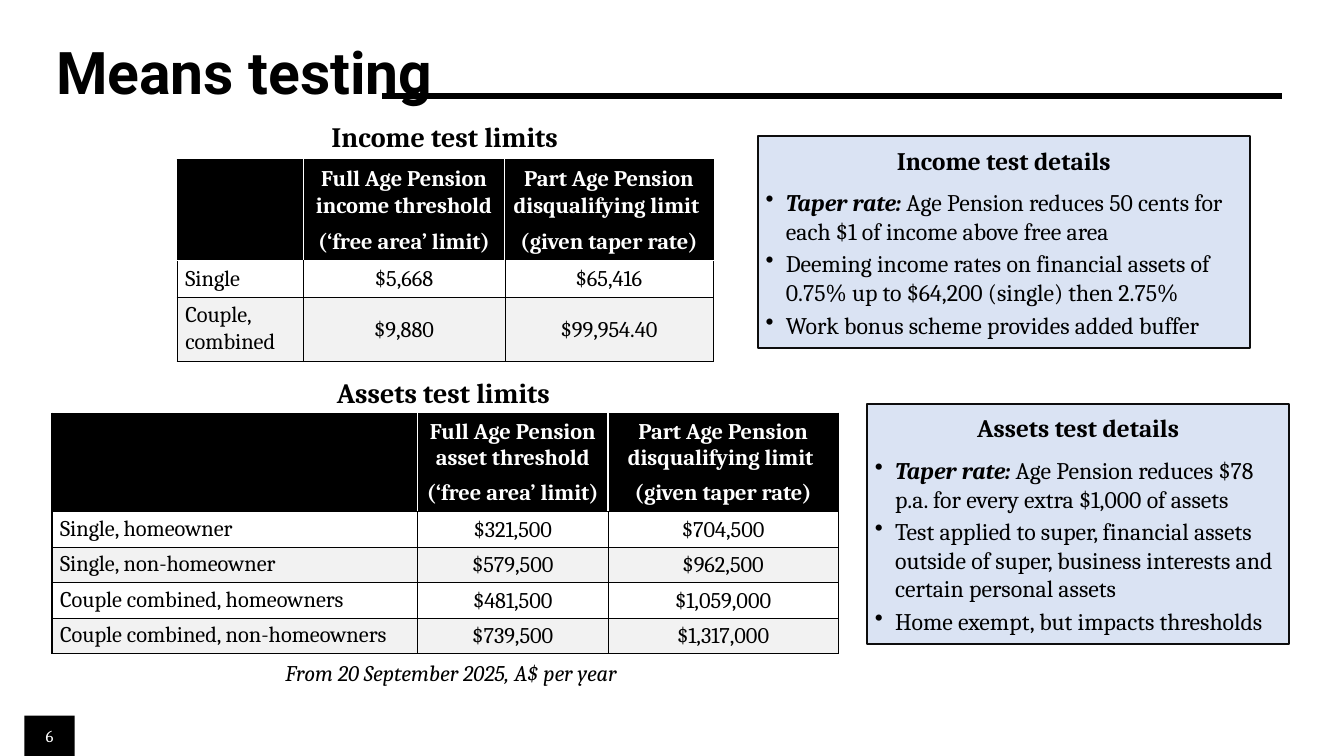
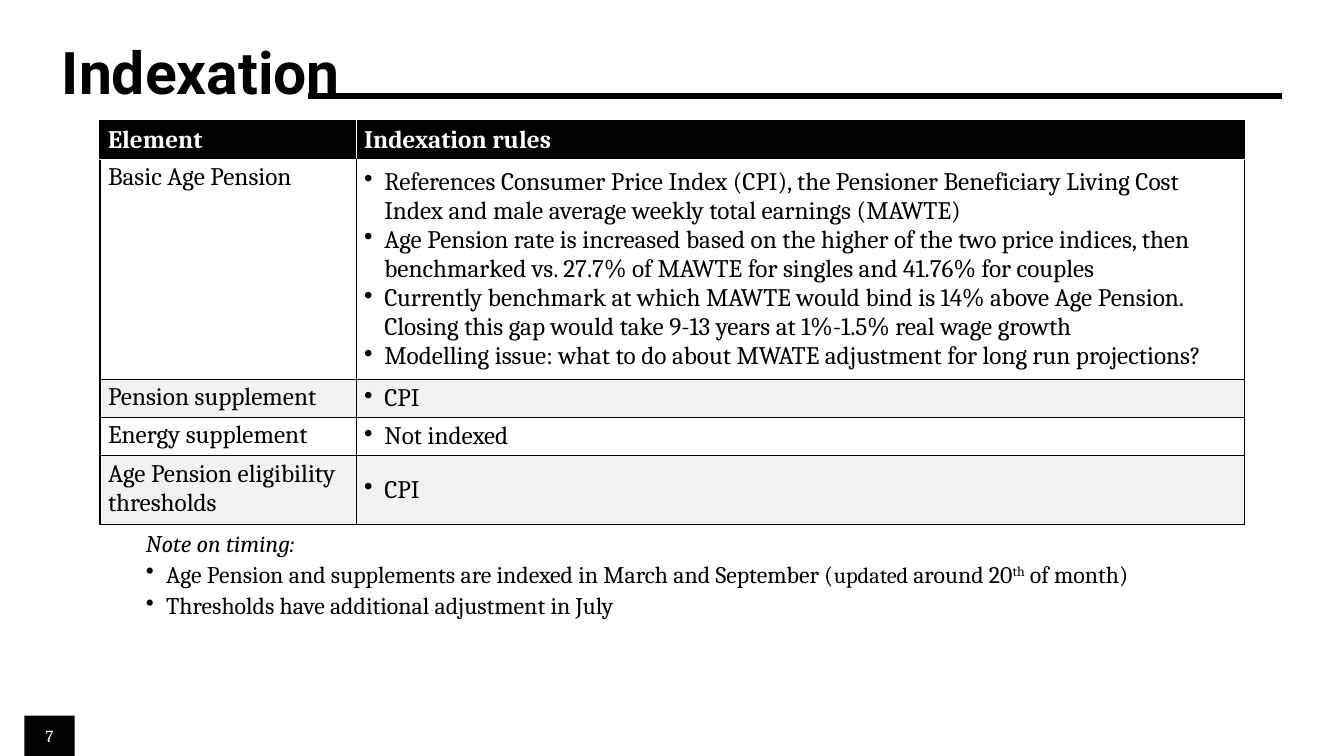
from lxml import etree
from pptx import Presentation
from pptx.dml.color import RGBColor
from pptx.enum.shapes import MSO_CONNECTOR, MSO_SHAPE
from pptx.enum.text import MSO_ANCHOR, PP_ALIGN
from pptx.oxml.ns import qn
from pptx.util import Inches, Pt

LEFT, CENTER = PP_ALIGN.LEFT, PP_ALIGN.CENTER
TOP, MIDDLE = MSO_ANCHOR.TOP, MSO_ANCHOR.MIDDLE
RECTANGLE, STRAIGHT = MSO_SHAPE.RECTANGLE, MSO_CONNECTOR.STRAIGHT

BLACK = RGBColor(0x00, 0x00, 0x00)
WHITE = RGBColor(0xFF, 0xFF, 0xFF)
STRIPE = RGBColor(0xF2, 0xF2, 0xF2)
PANEL = RGBColor(0xDA, 0xE3, 0xF3)
PANEL_EDGE = RGBColor(0x0D, 0x0D, 0x0D)
SERIF, SANS = "Cambria", "Roboto"

# The slide is a grid of 160 columns by 90 rows of square cells
CELL = Inches(1) // 12
COLUMNS, ROWS = 160, 90
RULE_Y, RULE_END = 11.4, 152.6
BULLET_INDENT = Inches(0.2)


def write(frame, text, size=16, color=BLACK, bold=False, italic=False, font=SERIF,
          align=LEFT, bullet=False, before=0, after=0, spacing=1.0):
    """Add a paragraph; text is a string or a list of (string, run format)."""
    first = not frame.text
    paragraph = frame.paragraphs[0] if first else frame.add_paragraph()
    if bullet:
        properties = paragraph._p.get_or_add_pPr()
        properties.set("marL", str(BULLET_INDENT))
        properties.set("indent", str(-BULLET_INDENT))
        etree.SubElement(properties, qn("a:buChar")).set("char", "•")
    paragraph.alignment = align
    paragraph.line_spacing = spacing
    paragraph.space_before = Pt(0 if first else before)
    paragraph.space_after = Pt(after)
    for words, style in [(text, {})] if isinstance(text, str) else text:
        run = paragraph.add_run()
        run.text = words
        run.font.name = font
        run.font.size = Pt(style.get("size", size))
        run.font.bold = style.get("bold", bold)
        run.font.italic = style.get("italic", italic)
        run.font.color.rgb = color
        if style.get("superscript"):
            run._r.get_or_add_rPr().set("baseline", "30000")


def draw_table(slide, left, top, widths, heights, rows, header_edge, header, label, value):
    """Draw a table; the last three arguments are text formats."""
    box = (left, top, sum(widths), sum(heights))
    table = slide.shapes.add_table(len(rows), len(widths), *(int(v * CELL) for v in box)).table
    for column, width in zip(table.columns, widths):
        column.width = int(width * CELL)
    for row, height in zip(table.rows, heights):
        row.height = int(height * CELL)
    last_row, last_column = len(rows) - 1, len(widths) - 1
    for r, texts in enumerate(rows):
        for c, text in enumerate(texts):
            cell = table.cell(r, c)
            cell.margin_left = cell.margin_right = Inches(0.08)
            cell.margin_top = cell.margin_bottom = Inches(0.04)
            cell.vertical_anchor = TOP if r and c == 0 else MIDDLE
            # Thick outline and header, thin inner lines
            borders = (
                ("a:lnL", r == 0 or c == 0, WHITE if r == 0 and c else BLACK),
                ("a:lnR", r == 0 or c == last_column, WHITE if r == 0 and c < last_column else BLACK),
                ("a:lnT", r <= 1, header_edge if r == 1 else BLACK),
                ("a:lnB", r in (0, last_row), header_edge if r == 0 else BLACK),
            )
            for tag, thick, color in borders:
                line = etree.SubElement(cell._tc.get_or_add_tcPr(), qn(tag))
                line.set("w", str(Pt(1 if thick else 0.5)))
                fill = etree.SubElement(line, qn("a:solidFill"))
                etree.SubElement(fill, qn("a:srgbClr")).set("val", str(color))
            cell.fill.solid()
            cell.fill.fore_color.rgb = BLACK if r == 0 else WHITE if r % 2 else STRIPE
            style = header if r == 0 else value if c else label
            for line_text in text.split("\n") if text else []:
                write(cell.text_frame, line_text, **style)


deck = Presentation()
deck.slide_width, deck.slide_height = COLUMNS * CELL, ROWS * CELL
blank = deck.slide_layouts[6]

# Title, rule and page number of every slide
slides = []
for number, heading, title_left, rule_start in (
    (6, "Means testing", 5.5, 45.5),
    (7, "Indexation", 6.2, 36.7),
):
    slide = deck.slides.add_slide(blank)
    slides.append(slide)
    title = slide.shapes.add_textbox(*(int(v * CELL) for v in (title_left, 3.7, 150, 10.6))).text_frame
    title.word_wrap = True
    title.vertical_anchor = MIDDLE
    write(title, heading, size=42, bold=True, font=SANS, spacing=0.9)

    badge = slide.shapes.add_shape(RECTANGLE, *(int(v * CELL) for v in (2.9, 85.2, 6, 4.8)))
    badge.shadow.inherit = False
    badge.fill.solid()
    badge.fill.fore_color.rgb = BLACK
    badge.line.fill.background()
    badge.text_frame.vertical_anchor = MIDDLE
    write(badge.text_frame, str(number), size=12, color=WHITE, align=CENTER)

    rule = slide.shapes.add_connector(
        STRAIGHT, *(int(v * CELL) for v in (rule_start, RULE_Y, RULE_END, RULE_Y)))
    rule.line.color.rgb = BLACK
    rule.line.width = Pt(4.5)
    etree.SubElement(rule._element.spPr, qn("a:effectLst"))

means, indexation = slides

# Means testing: captions and date
for text, box, style in (
    ("Income test limits", (21.1, 13.6, 63.7, 5.3), dict(size=20, bold=True, align=CENTER)),
    ("Assets test limits", (6, 44, 93.6, 5.3), dict(size=20, bold=True, align=CENTER)),
    ("From 20 September 2025, A$ per year", (32.8, 77.9, 48.8, 4.4), dict(italic=True)),
):
    caption = means.shapes.add_textbox(*(int(v * CELL) for v in box)).text_frame
    caption.word_wrap = True
    caption.vertical_anchor = MIDDLE
    write(caption, text, **style)

# Means testing: limits
income_rows = (
    ("", "Full Age Pension income threshold\n(‘free area’ limit)",
     "Part Age Pension disqualifying limit \n(given taper rate)"),
    ("Single", "$5,668", "$65,416"),
    ("Couple, combined", "$9,880", "$99,954.40"),
)
asset_rows = (
    ("", "Full Age Pension asset threshold\n(‘free area’ limit)",
     "Part Age Pension disqualifying limit \n(given taper rate)"),
    ("Single, homeowner", "$321,500", "$704,500"),
    ("Single, non-homeowner", "$579,500", "$962,500"),
    ("Couple combined, homeowners", "$481,500", "$1,059,000"),
    ("Couple combined, non-homeowners", "$739,500", "$1,317,000"),
)
for left, top, widths, heights, rows, edge, spacing in (
    (21.1, 19, (15, 24, 24.8), (11.7, 4.1, 7.4), income_rows, WHITE, 1.05),
    (6.2, 49.2, (43.5, 22.7, 27.4), (11.7, 4.2, 4.2, 4.2, 4.2), asset_rows, BLACK, 1.02),
):
    draw_table(means, left, top, widths, heights, rows, edge,
               header=dict(color=WHITE, bold=True, align=CENTER, before=6, spacing=spacing),
               label=dict(spacing=spacing),
               value=dict(align=CENTER, spacing=spacing))

# Means testing: detail panels
TAPER = ("Taper rate: ", dict(bold=True, italic=True))
for box, heading, points in (
    ((90.2, 16.2, 58.6, 25.2), "Income test details", (
        [TAPER, ("Age Pension reduces 50 cents for each $1 of income above free area", {})],
        "Deeming income rates on financial assets of 0.75% up to $64,200 (single) then 2.75%",
        "Work bonus scheme provides added buffer",
    )),
    ((103.2, 48.1, 50.3, 28.6), "Assets test details", (
        [TAPER, ("Age Pension reduces $78 p.a. for every extra $1,000 of assets", {})],
        "Test applied to super, financial assets outside of super, business interests "
        "and certain personal assets",
        "Home exempt, but impacts thresholds",
    )),
):
    panel = means.shapes.add_shape(RECTANGLE, *(int(v * CELL) for v in box))
    panel.shadow.inherit = False
    panel.fill.solid()
    panel.fill.fore_color.rgb = PANEL
    panel.line.color.rgb = PANEL_EDGE
    panel.line.width = Pt(1.5)
    details = panel.text_frame
    details.word_wrap = True
    details.vertical_anchor = MIDDLE
    details.margin_left = details.margin_right = Inches(0.08)
    details.margin_top = details.margin_bottom = Inches(0.08)
    write(details, heading, size=18, bold=True, align=CENTER, after=6)
    for point in points:
        write(details, point, size=17, bullet=True, before=3)

# Indexation: rules
index_rows = (
    ("Element", "Indexation rules"),
    ("Basic Age Pension",
     "References Consumer Price Index (CPI), the Pensioner Beneficiary Living Cost Index "
     "and male average weekly total earnings (MAWTE)\n"
     "Age Pension rate is increased based on the higher of the two price indices, then "
     "benchmarked vs. 27.7% of MAWTE for singles and 41.76% for couples\n"
     "Currently benchmark at which MAWTE would bind is 14% above Age Pension. Closing this "
     "gap would take 9-13 years at 1%-1.5% real wage growth\n"
     "Modelling issue: what to do about MWATE adjustment for long run projections?"),
    ("Pension supplement", "CPI"),
    ("Energy supplement", "Not indexed"),
    ("Age Pension eligibility thresholds", "CPI"),
)
draw_table(indexation, 11.9, 14.4, (30.5, 105.8), (4.4, 25.1, 4.4, 4.4, 7.9), index_rows, WHITE,
           header=dict(size=18, color=WHITE, bold=True),
           label=dict(size=18),
           value=dict(size=18, bullet=True))

# Indexation: note on timing
note = indexation.shapes.add_textbox(*(int(v * CELL) for v in (16.2, 62.3, 139.2, 11.9))).text_frame
note.word_wrap = True
write(note, "Note on timing:", size=17, italic=True)
for point in (
    [("Age Pension and supplements are indexed in March and September (", {}),
     ("updated ", dict(size=16)), ("around 20", {}), ("th", dict(superscript=True)),
     (" of month)", {})],
    "Thresholds have additional adjustment in July",
):
    write(note, point, size=17, bullet=True, before=2)

deck.save("out.pptx")
